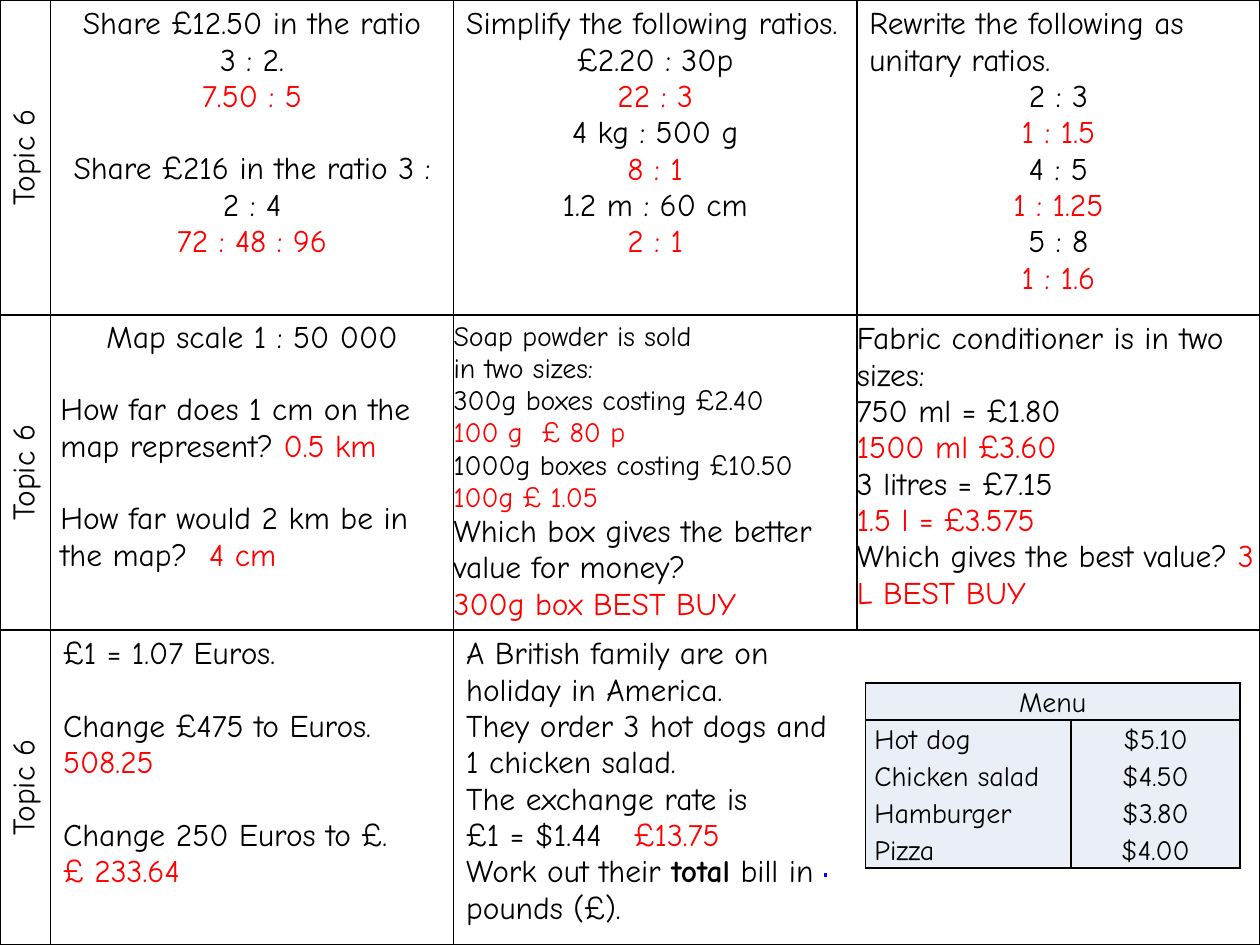
import lxml.etree
import pptx
import pptx.dml.color
import pptx.enum.shapes
import pptx.enum.text
import pptx.oxml
import pptx.oxml.ns
import pptx.util

Inches, Pt = pptx.util.Inches, pptx.util.Pt
RGBColor = pptx.dml.color.RGBColor
qn = pptx.oxml.ns.qn

BLACK = RGBColor(0, 0, 0)
RED = RGBColor(255, 0, 0)
BLUE = RGBColor(0, 0, 255)
PALE_BLUE = RGBColor(0xEA, 0xEF, 0xF7)
FONT = "Comic Neue"

CENTER = {"alignment": pptx.enum.text.PP_ALIGN.CENTER}
GAP = {"space_before": Pt(20.7)}
SMALL = {"size": 16}
MENU = {"size": 16, "line_spacing": 1.15}


def write_cell(cell, paragraphs, insets):
    """Write (question, answer, format) paragraphs; ** marks bold in a question."""
    sides = ("margin_left", "margin_top", "margin_right", "margin_bottom")
    for side, inset in zip(sides, insets):
        setattr(cell, side, Inches(inset))
    for index, (question, answer, style) in enumerate(paragraphs):
        frame = cell.text_frame
        paragraph = frame.add_paragraph() if index else frame.paragraphs[0]
        for key, value in style.items():
            if key not in ("size", "tab"):
                setattr(paragraph, key, value)
        if "tab" in style:
            tabs = lxml.etree.SubElement(paragraph._p.get_or_add_pPr(), qn("a:tabLst"))
            lxml.etree.SubElement(tabs, qn("a:tab"), pos=str(Inches(style["tab"])), algn="l")
        runs = [(part, BLACK, place % 2 == 1) for place, part in enumerate(question.split("**"))]
        runs.append((answer, RED, False))
        for text, color, bold in runs:
            if text:
                run = paragraph.add_run()
                run.text = text
                font = {"name": FONT, "size": Pt(style.get("size", 18)), "bold": bold}
                for key, value in font.items():
                    setattr(run.font, key, value)
                run.font.color.rgb = color


def style_cell(cell, fill=None, open_sides=""):
    """Draw the borders except on the open sides, then set the fill."""
    properties = cell._tc.get_or_add_tcPr()
    for side in "LRTB":
        border = lxml.etree.SubElement(properties, qn(f"a:ln{side}"), w=str(Pt(1)))
        if side in open_sides:
            lxml.etree.SubElement(border, qn("a:noFill"))
        else:
            solid = lxml.etree.SubElement(border, qn("a:solidFill"))
            lxml.etree.SubElement(solid, qn("a:srgbClr"), val=str(BLACK))
    if fill is None:
        cell.fill.background()
    else:
        cell.fill.solid()
        cell.fill.fore_color.rgb = fill


NORMAL = (0.1, 0.05, 0.1, 0.05)
TIGHT = (0.08, 0.04, 0.08, 0.04)
NO_SIDES = (0, 0.05, 0, 0.05)
TOPIC = ([("Topic 6", "", CENTER)], NORMAL)

questions = [
    [
        TOPIC,
        ([
            ("Share £12.50 in the ratio 3 : 2.", "", CENTER),
            ("", "7.50 : 5", CENTER),
            ("Share £216 in the ratio 3 : 2 : 4", "", CENTER | GAP),
            ("", "72 : 48 : 96", CENTER),
        ], NORMAL),
        ([
            ("Simplify the following ratios.", "", {}),
            ("£2.20 : 30p", "", CENTER),
            ("", "22 : 3", CENTER),
            ("4 kg : 500 g", "", CENTER),
            ("", "8 : 1", CENTER),
            ("1.2 m : 60 cm", "", CENTER),
            ("", "2 : 1", CENTER),
        ], NORMAL),
        ([
            ("Rewrite the following as unitary ratios.", "", {}),
            ("2 : 3", "", CENTER),
            ("", "1 : 1.5", CENTER),
            ("4 : 5", "", CENTER),
            ("", "1 : 1.25", CENTER),
            ("5 : 8", "", CENTER),
            ("", "1 : 1.6", CENTER),
        ], NORMAL),
    ],
    [
        TOPIC,
        ([
            ("Map scale 1 : 50 000", "", CENTER),
            ("How far does 1 cm on the map represent? ", "0.5 km", GAP),
            ("How far would 2 km be in the map?\t", "4 cm", GAP | {"tab": 1.18}),
        ], TIGHT),
        ([
            ("Soap powder is sold", "", SMALL),
            ("in two sizes:", "", SMALL),
            ("300g boxes costing £2.40", "", SMALL),
            ("", "100 g\t£ 80 p", SMALL | {"tab": 0.7}),
            ("1000g boxes costing £10.50", "", SMALL),
            ("", "100g £ 1.05", SMALL),
            ("Which box gives the better value for money?", "", {}),
            ("", "300g box BEST BUY", {}),
        ], NO_SIDES),
        ([
            ("Fabric conditioner is in two sizes:", "", {}),
            ("750 ml = £1.80", "", {}),
            ("", "1500 ml £3.60", {}),
            ("3 litres = £7.15", "", {}),
            ("", "1.5 l = £3.575", {}),
            ("Which gives the best value? ", "3 L BEST BUY", {}),
        ], NO_SIDES),
    ],
    [
        TOPIC,
        ([
            ("£1 = 1.07 Euros.", "", {}),
            ("Change £475 to Euros.", "", GAP),
            ("", "508.25", {}),
            ("Change 250 Euros to £.", "", GAP),
            ("", "£ 233.64", {}),
        ], NORMAL),
        ([
            ("A British family are on holiday in America.", "", {}),
            ("They order 3 hot dogs and 1 chicken salad.", "", {}),
            ("The exchange rate is", "", {}),
            ("£1 = $1.44\t", "£13.75", {"tab": 1.33}),
            ("Work out their **total** bill in pounds (£).", "", {}),
        ], NORMAL),
        ([], NORMAL),
    ],
]
prices = {"Hot dog": "$5.10", "Chicken salad": "$4.50", "Hamburger": "$3.80", "Pizza": "$4.00"}

presentation = pptx.Presentation()
presentation.slide_width, presentation.slide_height = Inches(10), Inches(7.5)
slide = presentation.slides.add_slide(presentation.slide_layouts[6])

# Grid of questions, with the topic turned upright in the first column
grid = slide.shapes.add_table(3, 4, 0, 0, Inches(10), Inches(7.5)).table
grid.first_row = grid.horz_banding = False
for column, width in zip(grid.columns, (0.4, 3.2, 3.2, 3.2)):
    column.width = Inches(width)
open_sides = {(2, 2): "R", (2, 3): "L"}
for row, cells in enumerate(questions):
    grid.rows[row].height = Inches(2.5)
    for column, (paragraphs, insets) in enumerate(cells):
        cell = grid.cell(row, column)
        write_cell(cell, paragraphs, insets)
        style_cell(cell, open_sides=open_sides.get((row, column), ""))
    grid.cell(row, 0)._tc.get_or_add_tcPr().set("vert", "vert270")

# Small pen mark
pen_mark = slide.shapes.add_connector(
    pptx.enum.shapes.MSO_CONNECTOR.STRAIGHT, Inches(6.55), Inches(6.96), Inches(6.55), Inches(6.93))
pen_mark.line.color.rgb = BLUE
pen_mark.line.width = Pt(1.5)
lxml.etree.SubElement(pen_mark._element.spPr, qn("a:effectLst"))

# Menu with prices
menu = slide.shapes.add_table(2, 2, Inches(6.87), Inches(5.42), Inches(2.97), Inches(1.46)).table
menu.first_row = menu.horz_banding = False
for column, width in zip(menu.columns, (1.63, 1.34)):
    column.width = Inches(width)
for row, height in zip(menu.rows, (0.29, 1.17)):
    row.height = Inches(height)
menu.cell(0, 0).merge(menu.cell(0, 1))
menu_insets = (0.07, 0, 0.07, 0)
write_cell(menu.cell(0, 0), [("Menu", "", MENU | CENTER)], menu_insets)
menu.cell(0, 0).vertical_anchor = pptx.enum.text.MSO_ANCHOR.MIDDLE
write_cell(menu.cell(1, 0), [(dish, "", MENU) for dish in prices], menu_insets)
write_cell(menu.cell(1, 1), [(price, "", MENU | CENTER) for price in prices.values()], menu_insets)
for cell in menu.iter_cells():
    style_cell(cell, PALE_BLUE)

presentation.save("out.pptx")
